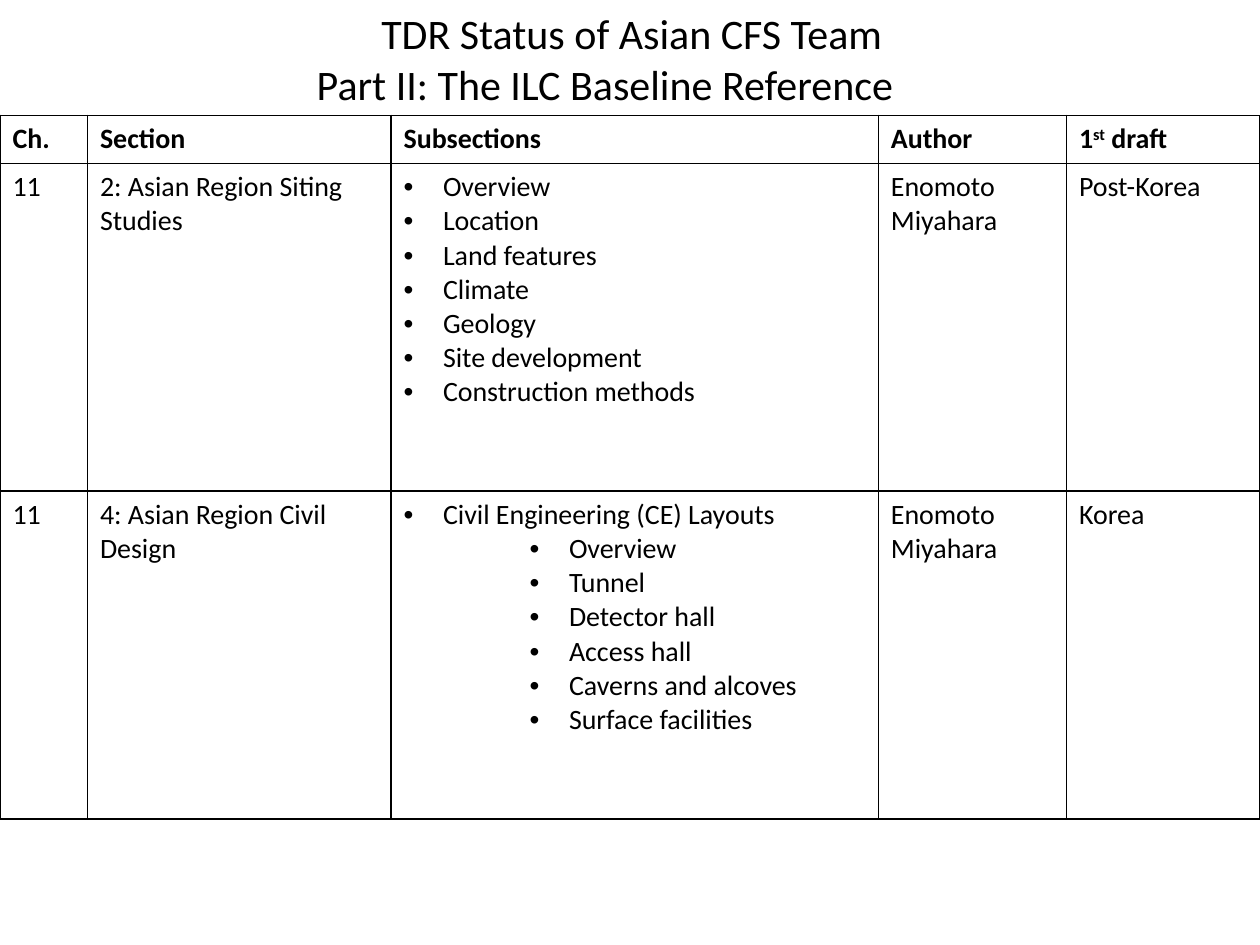
from dataclasses import dataclass

from lxml import etree
from pptx import Presentation
from pptx.dml.color import RGBColor
from pptx.enum import text
from pptx.oxml import ns
from pptx.util import Pt


@dataclass(frozen=True)
class Theme:
    font: str = "Calibri"
    ink: RGBColor = RGBColor(0, 0, 0)
    title_size: float = 24
    table_size: float = 16
    border: float = 1
    bullet_indent: float = 22.5
    level_step: float = 36


THEME = Theme()

TITLE_LINES = ["TDR Status of Asian CFS Team", "Part II: The ILC Baseline Reference\t"]

# A cell is a list of paragraphs: (bullet level or None, [(text, superscript), ...]).


def plain(*lines):
    return [(None, [(line, False)]) for line in lines]


def bullets(level, *lines):
    return [(level, [(line, False)]) for line in lines]


HEADINGS = [
    plain("Ch."),
    plain("Section"),
    plain("Subsections"),
    plain("Author"),
    [(None, [("1", False), ("st", True), (" draft", False)])],
]
SITING = bullets(0, "Overview", "Location", "Land features", "Climate", "Geology",
                 "Site development", "Construction methods")
CIVIL = bullets(0, "Civil Engineering (CE) Layouts") + bullets(
    2, "Overview", "Tunnel", "Detector hall", "Access hall",
    "Caverns and alcoves", "Surface facilities")
AUTHORS = plain("Enomoto", "Miyahara")
ROWS = [
    HEADINGS,
    [plain("11"), plain("2: Asian Region Siting Studies"), SITING, AUTHORS,
     plain("Post-Korea")],
    [plain("11"), plain("4: Asian Region Civil Design"), CIVIL, AUTHORS,
     plain("Korea")],
]

SLIDE_WIDTH, SLIDE_HEIGHT = 720, 540
TITLE_BOX = (2, 1, 718, 64.5)
TABLE_TOP = 66
COLUMN_WIDTHS = [50, 173.5, 278.5, 107.5, 110.5]
ROW_HEIGHTS = [27.5, 187.2, 187.2]


def style(font, size, bold=False):
    font.name = THEME.font
    font.size = Pt(size)
    font.bold = bold
    font.color.rgb = THEME.ink


def add_bullet(paragraph, level):
    paragraph.level = level
    properties = paragraph._p.get_or_add_pPr()
    left = THEME.bullet_indent + THEME.level_step * level
    properties.set("marL", str(Pt(left)))
    properties.set("indent", str(-Pt(THEME.bullet_indent)))
    etree.SubElement(properties, ns.qn("a:buFont"), typeface="Arial")
    etree.SubElement(properties, ns.qn("a:buChar"), char="•")


def add_borders(cell):
    properties = cell._tc.get_or_add_tcPr()
    for side in ("lnL", "lnR", "lnT", "lnB"):
        line = etree.SubElement(properties, ns.qn(f"a:{side}"),
                                w=str(Pt(THEME.border)))
        fill = etree.SubElement(line, ns.qn("a:solidFill"))
        etree.SubElement(fill, ns.qn("a:srgbClr"), val=str(THEME.ink))


def fill_cell(cell, paragraphs, bold):
    add_borders(cell)
    cell.fill.background()
    frame = cell.text_frame
    for index, (level, pieces) in enumerate(paragraphs):
        paragraph = frame.add_paragraph() if index else frame.paragraphs[0]
        if level is not None:
            add_bullet(paragraph, level)
        for words, superscript in pieces:
            run = paragraph.add_run()
            run.text = words
            style(run.font, THEME.table_size, bold)
            if superscript:
                run._r.get_or_add_rPr().set("baseline", "30000")


def add_title(slide):
    title = slide.shapes.title
    title.left, title.top, title.width, title.height = map(Pt, TITLE_BOX)
    title.text_frame.vertical_anchor = text.MSO_ANCHOR.MIDDLE
    heading = title.text_frame.paragraphs[0]
    heading.alignment = text.PP_ALIGN.CENTER
    for index, line in enumerate(TITLE_LINES):
        if index:
            heading.add_line_break()
        run = heading.add_run()
        run.text = line
        style(run.font, THEME.title_size)
    style(heading.font, THEME.title_size)


def add_status_table(slide):
    status = slide.shapes.add_table(
        len(ROWS), len(COLUMN_WIDTHS), Pt(0), Pt(TABLE_TOP),
        Pt(sum(COLUMN_WIDTHS)), Pt(sum(ROW_HEIGHTS))).table
    status.horz_banding = False
    for column, width in zip(status.columns, COLUMN_WIDTHS):
        column.width = Pt(width)
    for row_index, (row, height) in enumerate(zip(status.rows, ROW_HEIGHTS)):
        row.height = Pt(height)
        for cell, paragraphs in zip(row.cells, ROWS[row_index]):
            fill_cell(cell, paragraphs, bold=row_index == 0)


def main():
    deck = Presentation()
    deck.slide_width, deck.slide_height = Pt(SLIDE_WIDTH), Pt(SLIDE_HEIGHT)
    slide = deck.slides.add_slide(deck.slide_layouts.get_by_name("Title Only"))
    add_title(slide)
    add_status_table(slide)
    deck.save("out.pptx")


if __name__ == "__main__":
    main()
